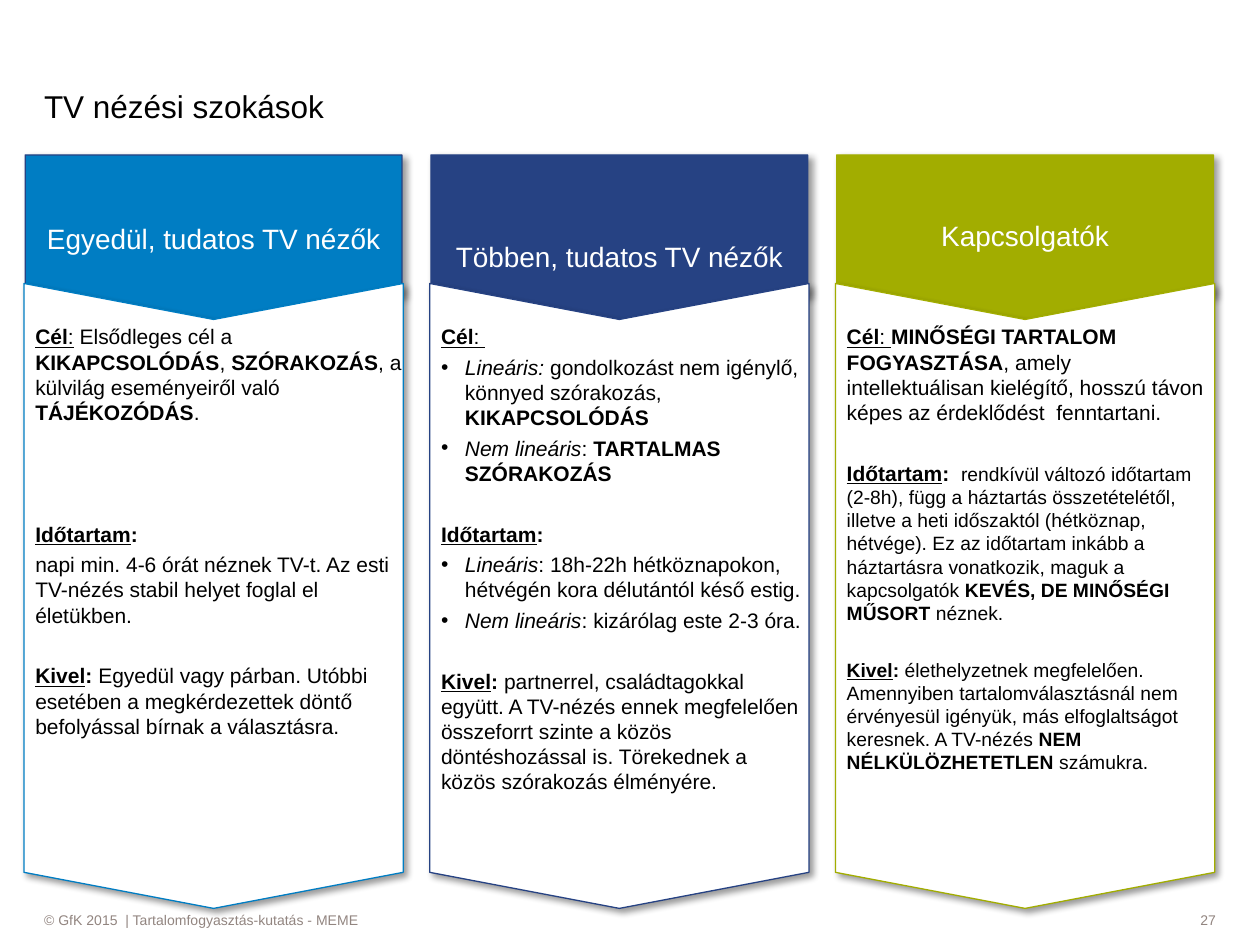
from lxml.etree import SubElement
from pptx import Presentation
from pptx.dml.color import RGBColor
from pptx.enum.shapes import MSO_SHAPE
from pptx.enum.text import MSO_ANCHOR, PP_ALIGN
from pptx.oxml.ns import qn
from pptx.util import Inches, Pt

BLACK = RGBColor(0x00, 0x00, 0x00)
WHITE = RGBColor(0xFF, 0xFF, 0xFF)
GREY = RGBColor(0x92, 0x85, 0x80)
BLUE = RGBColor(0x00, 0x7D, 0xC3)
NAVY = RGBColor(0x26, 0x42, 0x83)
GREEN = RGBColor(0xA2, 0xAD, 0x00)

FONT = "Arial"
LEFT, PITCH, COLUMN_WIDTH = 0.2, 3.22, 2.99
HEADER_TOP, HEADER_SIDE, HEADER_TIP = 1.23, 2.34, 2.57
PANEL_TOP, PANEL_WIDTH, PANEL_HEIGHT = 2.25, 3.01, 4.96
TEXT_INDENT, TEXT_WIDTH, TEXT_HEIGHT = 0.08, 2.91, 4.09
TIGHT, SMALL_SECTION, SECTION, WIDE_SECTION = 3, 19.2, 20.4, 55.2
HANGING = 0.19

# Header: text, fill, outline, top inset.
HEADERS = [
    ("Egyedül, tudatos TV nézők", BLUE, NAVY, 0.1),
    ("Többen, tudatos TV nézők", NAVY, NAVY, 0.39),
    ("Kapcsolgatók", GREEN, GREEN, 0.05),
]
PANEL_LINES = [BLUE, NAVY, GREEN]

# Paragraph: space before, bulleted, spans of (text, style letters b/i/u, size).
BODIES = [
    [
        (0, False, [("Cél", "bu", 12), (":", "u", 12), (" Elsődleges cél a ", "", 12),
                    ("KIKAPCSOLÓDÁS", "b", 12), (", ", "", 12), ("SZÓRAKOZÁS", "b", 12),
                    (", a külvilág eseményeiről való ", "", 12),
                    ("TÁJÉKOZÓDÁS", "b", 12), (".", "", 12)]),
        (WIDE_SECTION, False, [("Időtartam", "bu", 12), (":", "b", 12)]),
        (TIGHT, False, [("napi min. 4-6 órát néznek TV-t. Az esti TV-nézés stabil "
                         "helyet foglal el életükben.", "", 12)]),
        (SECTION, False, [("Kivel", "bu", 12), (": ", "b", 12),
                          ("Egyedül vagy párban. Utóbbi esetében a megkérdezettek "
                           "döntő befolyással bírnak a választásra.", "", 12)]),
    ],
    [
        (0, False, [("Cél", "bu", 12), (": ", "u", 12)]),
        (TIGHT, True, [("Lineáris:", "i", 12),
                       (" gondolkozást nem igénylő, könnyed szórakozás, ", "", 12),
                       ("KIKAPCSOLÓDÁS", "b", 12)]),
        (TIGHT, True, [("Nem lineáris", "i", 12), (": ", "", 12),
                       ("TARTALMAS SZÓRAKOZÁS", "b", 12)]),
        (SECTION, False, [("Időtartam", "bu", 12), (":", "b", 12)]),
        (TIGHT, True, [("Lineáris", "i", 12),
                       (": 18h-22h hétköznapokon, hétvégén kora délutántól "
                        "késő estig.", "", 12)]),
        (TIGHT, True, [("Nem lineáris", "i", 12),
                       (": kizárólag este 2-3 óra.", "", 12)]),
        (SECTION, False, [("Kivel", "bu", 12), (": ", "b", 12),
                          ("partnerrel, családtagokkal együtt. A TV-nézés ennek "
                           "megfelelően összeforrt szinte a közös döntéshozással is. "
                           "Törekednek a közös szórakozás élményére.", "", 12)]),
    ],
    [
        (0, False, [("Cél", "bu", 12), (": ", "u", 12),
                    ("MINŐSÉGI TARTALOM FOGYASZTÁSA", "b", 12),
                    (", amely intellektuálisan kielégítő, hosszú távon képes az "
                     "érdeklődést  fenntartani.", "", 12)]),
        (SECTION, False, [("Időtartam", "bu", 12), (":  ", "b", 12),
                          ("rendkívül változó időtartam (2-8h), függ a háztartás "
                           "összetételétől, illetve a heti időszaktól (hétköznap, "
                           "hétvége). Ez az időtartam inkább a háztartásra vonatkozik, "
                           "maguk a kapcsolgatók ", "", 11),
                          ("KEVÉS, DE MINŐSÉGI MŰSORT ", "b", 11), ("néznek.", "", 11)]),
        (SMALL_SECTION, False, [("Kivel", "bu", 11), (": ", "b", 11),
                                ("élethelyzetnek megfelelően. Amennyiben "
                                 "tartalomválasztásnál nem érvényesül igényük, más "
                                 "elfoglaltságot keresnek. A TV-nézés ", "", 11),
                                ("NEM NÉLKÜLÖZHETETLEN", "b", 11),
                                (" számukra.", "", 11)]),
    ],
]


def column_left(column):
    return LEFT + column * PITCH


def add_span(para, text, size, color, style=""):
    span = para.add_run()
    span.text = text
    font = span.font
    font.name, font.size, font.color.rgb = FONT, Pt(size), color
    font.bold, font.italic, font.underline = (letter in style for letter in "biu")


def set_frame(frame, anchor, insets=(0, 0, 0, 0)):
    frame.word_wrap = True
    frame.vertical_anchor = anchor
    (frame.margin_left, frame.margin_top,
     frame.margin_right, frame.margin_bottom) = map(Inches, insets)


def add_title(page, text):
    box = page.shapes.add_textbox(*map(Inches, (0.35, 0.28, 6.93, 0.71)))
    set_frame(box.text_frame, MSO_ANCHOR.BOTTOM)
    add_span(box.text_frame.paragraphs[0], text, 18, BLACK)


def add_footer(page, left, width, text, align):
    footer = page.shapes.add_shape(MSO_SHAPE.RECTANGLE,
                                   *map(Inches, (left, 7.22, width, 0.16)))
    footer.fill.solid()
    footer.fill.fore_color.rgb = WHITE
    footer.line.fill.background()
    footer.shadow.inherit = False
    set_frame(footer.text_frame, MSO_ANCHOR.MIDDLE)
    para = footer.text_frame.paragraphs[0]
    para.alignment = align
    add_span(para, text, 8, GREY)


def paint(shape, fill, line):
    """Give a shape its fill, thin outline and soft diagonal shadow."""
    shape.fill.solid()
    shape.fill.fore_color.rgb = fill
    shape.line.color.rgb = line
    shape.line.width = Pt(0.75)
    shape.shadow.inherit = False
    effects = shape._element.spPr.find(qn("a:effectLst"))
    shadow = SubElement(effects, qn("a:outerShdw"), blurRad=str(Pt(4)),
                        dist=str(Pt(3)), dir="2700000", algn="tl", rotWithShape="0")
    color = SubElement(shadow, qn("a:srgbClr"), val="000000")
    SubElement(color, qn("a:alpha"), val="40000")


def add_header(page, column, text, fill, line, top_inset):
    left = column_left(column)
    right = left + COLUMN_WIDTH
    outline = [(left, HEADER_TOP), (left, HEADER_SIDE),
               (left + COLUMN_WIDTH / 2, HEADER_TIP),
               (right, HEADER_SIDE), (right, HEADER_TOP)]
    start, *others = [(Inches(x), Inches(y)) for x, y in outline]
    builder = page.shapes.build_freeform(*start)
    builder.add_line_segments(others)
    header = builder.convert_to_shape()
    paint(header, fill, line)
    set_frame(header.text_frame, MSO_ANCHOR.MIDDLE, (0.1, top_inset, 0.1, 0.12))
    para = header.text_frame.paragraphs[0]
    para.alignment = PP_ALIGN.CENTER
    add_span(para, text, 16, WHITE)


def add_panel(page, column, line):
    """Add a chevron turned to point down, sized before its rotation."""
    center = column_left(column) + COLUMN_WIDTH / 2
    panel = page.shapes.add_shape(
        MSO_SHAPE.CHEVRON, Inches(center - PANEL_HEIGHT / 2),
        Inches(PANEL_TOP + (PANEL_HEIGHT - PANEL_WIDTH) / 2),
        Inches(PANEL_HEIGHT), Inches(PANEL_WIDTH))
    panel.adjustments[0] = 0.095
    panel.rotation = 90
    paint(panel, WHITE, line)


def add_bullet(para):
    properties = para._p.get_or_add_pPr()
    properties.set("marL", str(Inches(HANGING)))
    properties.set("indent", str(-Inches(HANGING)))
    SubElement(properties, qn("a:buFont"), typeface=FONT)
    SubElement(properties, qn("a:buChar"), char="•")


def add_body(page, column, paragraphs):
    left = column_left(column) + TEXT_INDENT
    box = page.shapes.add_textbox(
        *map(Inches, (left, HEADER_TIP, TEXT_WIDTH, TEXT_HEIGHT)))
    frame = box.text_frame
    set_frame(frame, MSO_ANCHOR.TOP)
    for index, (space, bulleted, spans) in enumerate(paragraphs):
        para = frame.add_paragraph() if index else frame.paragraphs[0]
        if bulleted:
            add_bullet(para)
        para.space_before = Pt(space)
        for text, style, size in spans:
            add_span(para, text, size, BLACK, style)


def main():
    deck = Presentation()
    deck.slide_width, deck.slide_height = Inches(10), Inches(7.5)
    page = deck.slides.add_slide(deck.slide_layouts[6])
    add_footer(page, 0.35, 7.72, "© GfK 2015  | Tartalomfogyasztás-kutatás - MEME",
               PP_ALIGN.LEFT)
    add_footer(page, 8.23, 1.42, "27", PP_ALIGN.RIGHT)
    add_title(page, "TV nézési szokások")
    for column, header in enumerate(HEADERS):
        add_header(page, column, *header)
    for column, line in enumerate(PANEL_LINES):
        add_panel(page, column, line)
    for column, paragraphs in enumerate(BODIES):
        add_body(page, column, paragraphs)
    deck.save("out.pptx")


if __name__ == "__main__":
    main()
